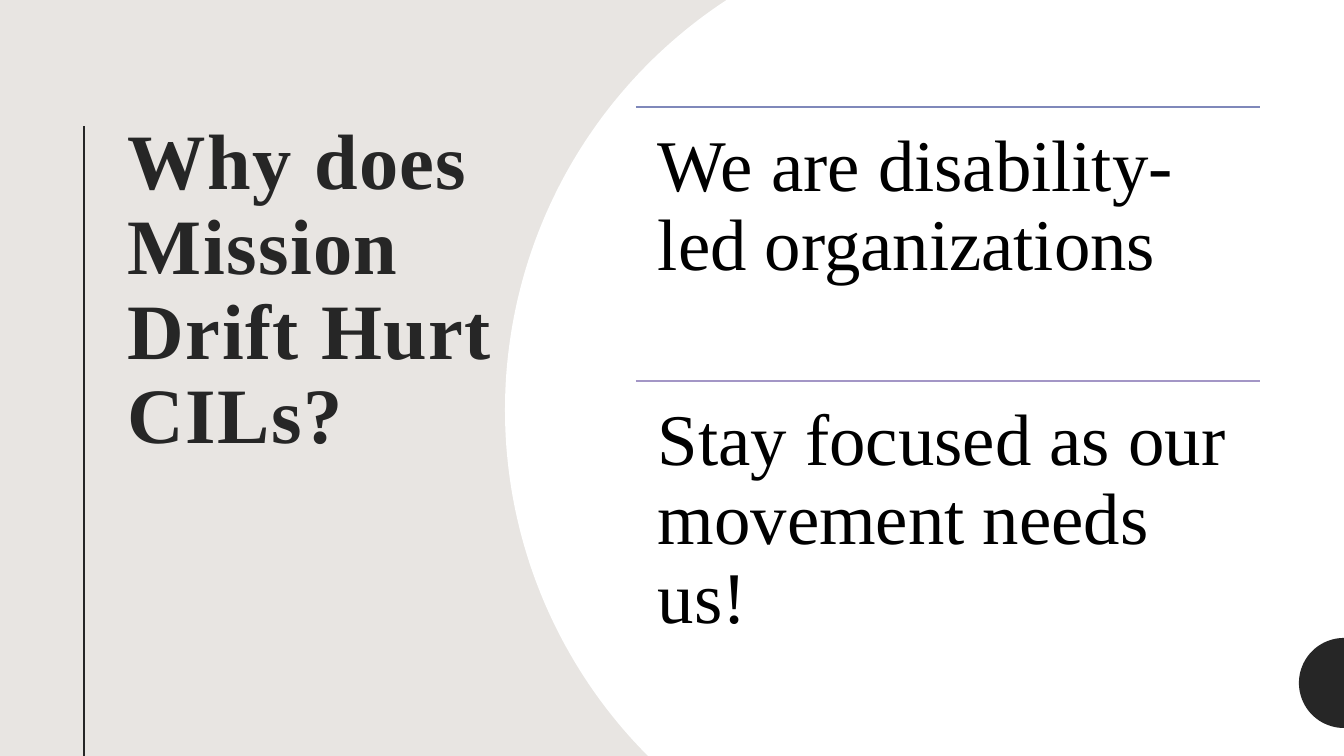
from dataclasses import dataclass
from math import asin, cos, pi, sin

from lxml import etree
from pptx import Presentation
from pptx.dml.color import RGBColor
from pptx.enum.shapes import MSO_CONNECTOR
from pptx.enum.text import MSO_ANCHOR, MSO_AUTO_SIZE, PP_ALIGN
from pptx.oxml.ns import qn
from pptx.util import Emu, Pt

LINE = MSO_CONNECTOR.STRAIGHT
TOP = MSO_ANCHOR.TOP
LEFT = PP_ALIGN.LEFT
FIXED = MSO_AUTO_SIZE.NONE
SCALE = 914400 / 100.8
WIDE, HIGH = 1344, 756
TITLE_ONLY = 5


@dataclass(frozen=True)
class Theme:
    font: str = "Times New Roman"
    sand: str = "E8E5E2"
    dark: str = "262626"
    white: str = "FFFFFF"
    black: str = "000000"
    title: int = 56
    body: int = 52


THEME = Theme()
POINTS = [
    ("We are disability-led organizations", "7F88BA"),
    ("Stay focused as our movement needs us!", "A396C6"),
]


def px(n):
    return Emu(round(n * SCALE))


def rgb(code):
    return RGBColor.from_string(code)


def put_text(box, text, size, color, bold=False, track=0, inset=(10, 5)):
    """Fill a text shape with one formatted paragraph."""
    frame = box.text_frame
    frame.word_wrap = True
    frame.auto_size = FIXED
    frame.vertical_anchor = TOP
    frame.margin_left = frame.margin_right = px(inset[0])
    frame.margin_top = frame.margin_bottom = px(inset[1])
    para = frame.paragraphs[0]
    para.alignment = LEFT
    para.line_spacing = 0.9
    para.space_before = Pt(0)
    run = para.add_run()
    run.text = text
    font = run.font
    font.name, font.size, font.bold = THEME.font, Pt(size), bold
    font.color.rgb = rgb(color)
    if track:
        font._element.set("spc", str(track * 100))


def add_rule(slide, x1, y1, x2, y2, color, width):
    rule = slide.shapes.add_connector(LINE, px(x1), px(y1), px(x2), px(y2))
    rule.line.color.rgb = rgb(color)
    rule.line.width = Pt(width)
    etree.SubElement(rule._element.spPr, qn("a:effectLst"))


def add_disc(slide, cx, cy, radius, color, steps=120):
    """Draw a disc that the slide edges cut, filled to the right edge."""
    low = asin(min(1, (HIGH - cy) / radius))
    high = asin(min(1, cy / radius))
    start, sweep = pi - low, low + high
    angles = [start + sweep * i / steps for i in range(steps + 1)]
    arc = [(cx + radius * cos(a), cy + radius * sin(a)) for a in angles]
    ends = [(WIDE, arc[-1][1]), (WIDE, arc[0][1])]
    dots = [(px(x), px(y)) for x, y in arc + ends]
    pen = slide.shapes.build_freeform(*dots[0])
    pen.add_line_segments(dots[1:], close=True)
    disc = pen.convert_to_shape()
    disc.shadow.inherit = False
    disc.fill.solid()
    disc.fill.fore_color.rgb = rgb(color)
    disc.line.fill.background()


def add_title(slide, text):
    title = slide.shapes.title
    title.left, title.top = px(118), px(117)
    title.width, title.height = px(401), px(532)
    put_text(title, text, THEME.title, THEME.dark, bold=True, track=1)


def add_point(slide, top, text, color):
    left, width, height = 636, 624, 274
    add_rule(slide, left, top, left + width, top, color, 1)
    box = slide.shapes.add_textbox(px(left), px(top), px(width), px(height))
    put_text(box, text, THEME.body, THEME.black, inset=(22, 22))


def main():
    deck = Presentation()
    deck.slide_width, deck.slide_height = px(WIDE), px(HIGH)
    slide = deck.slides.add_slide(deck.slide_layouts[TITLE_ONLY])

    # Backdrop
    slide.background.fill.solid()
    slide.background.fill.fore_color.rgb = rgb(THEME.sand)

    # Title and its side rule
    add_title(slide, "Why does Mission Drift Hurt CILs?")
    add_rule(slide, 84, 126, 84, HIGH, THEME.dark, 1.5)

    # Large white disc and small dark one
    add_disc(slide, 995, 410, 490, THEME.white)
    add_disc(slide, WIDE, 683, 45, THEME.dark)

    # Ruled points
    for i, (text, color) in enumerate(POINTS):
        add_point(slide, 107 + 274 * i, text, color)

    deck.save("out.pptx")


if __name__ == "__main__":
    main()
